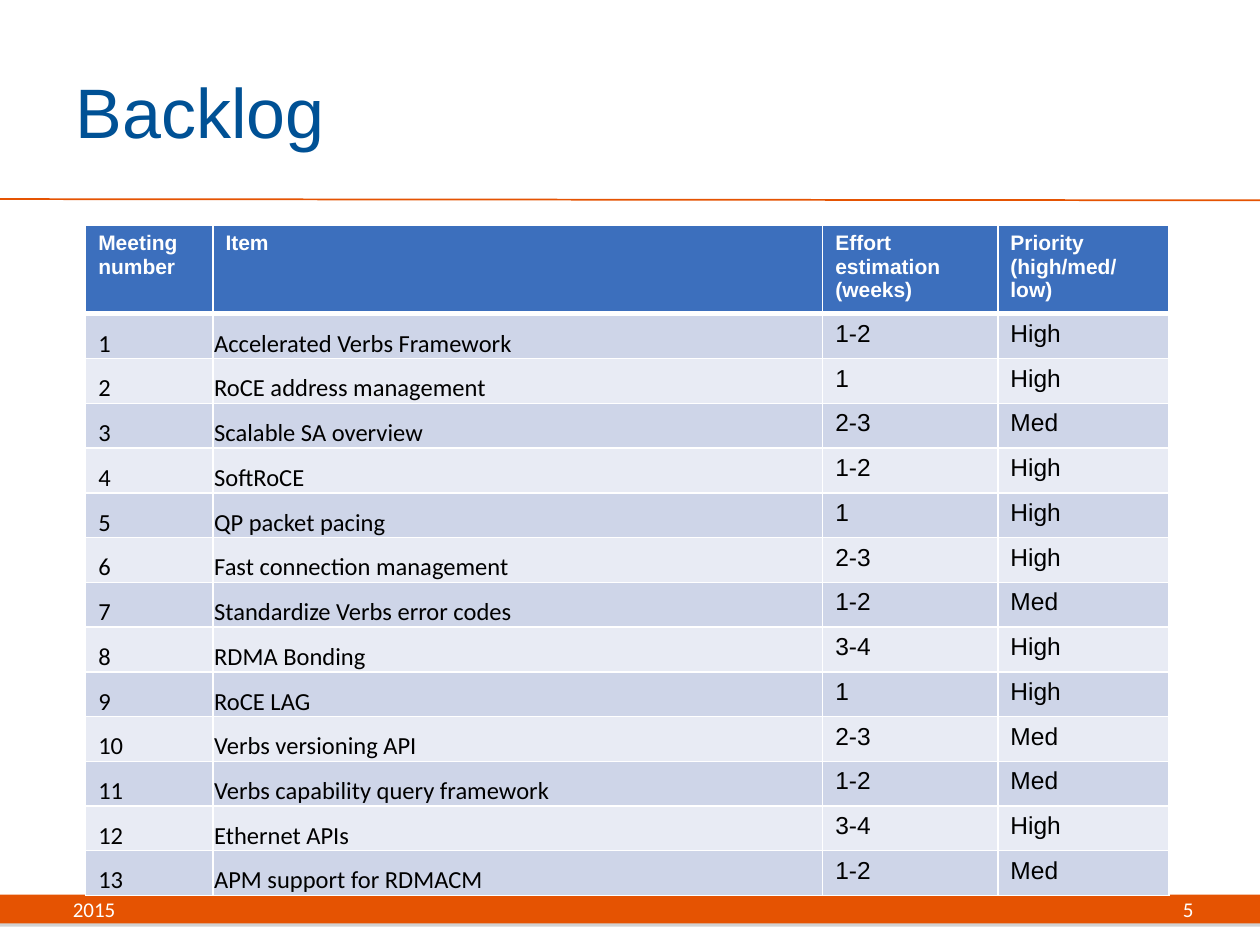
from dataclasses import dataclass
from lxml import etree
from pptx import Presentation
from pptx.dml.color import RGBColor
from pptx.enum.shapes import MSO_CONNECTOR, MSO_SHAPE
from pptx.enum.text import MSO_ANCHOR, MSO_AUTO_SIZE, PP_ALIGN
from pptx.oxml import parse_xml
from pptx.oxml.ns import qn
from pptx.util import Inches, Pt

LEFT, RIGHT = PP_ALIGN.LEFT, PP_ALIGN.RIGHT
TOP, MID, LOW = MSO_ANCHOR.TOP, MSO_ANCHOR.MIDDLE, MSO_ANCHOR.BOTTOM
FIXED = MSO_AUTO_SIZE.NONE
RECT, LINE = MSO_SHAPE.RECTANGLE, MSO_CONNECTOR.STRAIGHT
WIDE, HIGH = Inches(10), Inches(7.5)
SPACE = "http://schemas.openxmlformats.org/drawingml/2006/main"
WHITE, BLACK, ORANGE = "FFFFFF", "000000", "E55302"
BANDS = ["CED5E8", "E8EBF4"]
COLS = [1.01, 4.84, 1.39, 1.36]
HEAD, TALL = 0.57, 5.19
HEADS = [["Meeting number"], ["Item"], ["Effort estimation", "(weeks)"],
         ["Priority", "(high/med/low)"]]


@dataclass
class Font:
    size: int
    name: str
    tint: str
    bold: bool = False


@dataclass
class Task:
    item: str
    weeks: str
    rank: str


@dataclass
class Note:
    text: str
    left: float
    width: float
    align: PP_ALIGN


TASKS = [
    Task("Accelerated Verbs Framework", "1-2", "High"),
    Task("RoCE address management", "1", "High"),
    Task("Scalable SA overview", "2-3", "Med"),
    Task("SoftRoCE", "1-2", "High"),
    Task("QP packet pacing", "1", "High"),
    Task("Fast connection management", "2-3", "High"),
    Task("Standardize Verbs error codes", "1-2", "Med"),
    Task("RDMA Bonding", "3-4", "High"),
    Task("RoCE LAG", "1", "High"),
    Task("Verbs versioning API", "2-3", "Med"),
    Task("Verbs capability query framework", "1-2", "Med"),
    Task("Ethernet APIs", "3-4", "High"),
    Task("APM support for RDMACM", "1-2", "Med"),
]
NOTES = [Note("2015", 0.48, 9.05, LEFT), Note("5", 8.38, 1.19, RIGHT)]
HEAD_FONT = Font(12, "Arial", WHITE, True)
ITEM_FONT = Font(14, "Calibri", BLACK)
RANK_FONT = Font(14, "Arial", BLACK)


def color(code: str) -> RGBColor:
    return RGBColor.from_string(code)


def paint(shape, code: str) -> None:
    shape.fill.solid()
    shape.fill.fore_color.rgb = color(code)


def write(frame, lines: list[str], font: Font, align: PP_ALIGN = LEFT) -> None:
    for i, text in enumerate(lines):
        para = frame.paragraphs[0] if i == 0 else frame.add_paragraph()
        para.alignment = align
        run = para.add_run()
        run.text = text
        run.font.size = Pt(font.size)
        run.font.name = font.name
        run.font.bold = font.bold
        run.font.color.rgb = color(font.tint)


def edge(cell, side: str, width: float) -> None:
    props = cell._tc.get_or_add_tcPr()
    line = etree.SubElement(props, qn(f"a:ln{side}"), w=str(Pt(width)))
    fill = etree.SubElement(line, qn("a:solidFill"))
    etree.SubElement(fill, qn("a:srgbClr"), val=WHITE)


def dress(cell, lines: list[str], font: Font, tint: str, base: float) -> None:
    for side, width in zip("LRTB", [1, 1, 1, base]):
        edge(cell, side, width)
    paint(cell, tint)
    cell.vertical_anchor = TOP
    write(cell.text_frame, lines, font)


def sink(cell, left: float) -> None:
    cell.vertical_anchor = LOW
    cell.margin_left = Inches(left)
    cell.margin_right = cell.margin_top = Inches(0.01)
    cell.margin_bottom = 0


def draw_bar(slide) -> None:
    bar = slide.shapes.add_shape(RECT, 0, Inches(7.1), WIDE, Inches(0.23))
    paint(bar, ORANGE)
    bar.line.fill.background()
    bar._element.spPr.append(parse_xml(
        f'<a:effectLst xmlns:a="{SPACE}"><a:outerShdw blurRad="0" '
        f'dist="{Pt(1.8)}" dir="5400000" rotWithShape="0">'
        '<a:srgbClr val="808080"><a:alpha val="35000"/></a:srgbClr>'
        '</a:outerShdw></a:effectLst>'))


def draw_rule(slide) -> None:
    rule = slide.shapes.add_connector(LINE, 0, Inches(1.58), WIDE, Inches(1.59))
    rule.line.color.rgb = color(ORANGE)
    rule.line.width = Pt(1)
    etree.SubElement(rule._element.spPr, qn("a:effectLst"))


def draw_title(slide) -> None:
    title = slide.shapes.title
    title.left, title.top = Inches(0.5), Inches(0.25)
    title.width, title.height = Inches(8.17), Inches(1.25)
    title.text_frame.auto_size = FIXED
    title.text_frame.vertical_anchor = MID
    write(title.text_frame, ["Backlog"], Font(40, "Arial", "005195"))


def draw_note(slide, note: Note) -> None:
    box = slide.shapes.add_textbox(Inches(note.left), Inches(7.1),
                                   Inches(note.width), Inches(0.23))
    box.text_frame.word_wrap = True
    box.text_frame.vertical_anchor = MID
    write(box.text_frame, [note.text], Font(12, "Calibri", WHITE), note.align)


def draw_table(slide) -> None:
    table = slide.shapes.add_table(
        len(TASKS) + 1, len(COLS), Inches(0.68), Inches(1.79),
        Inches(sum(COLS)), Inches(TALL)).table
    for col, width in zip(table.columns, COLS):
        col.width = Inches(width)
    step = (TALL - HEAD) / len(TASKS)
    for i, row in enumerate(table.rows):
        row.height = Inches(step if i else HEAD)
    for cell, lines in zip(table.rows[0].cells, HEADS):
        dress(cell, lines, HEAD_FONT, "3C6FBD", 3)
    for i, task in enumerate(TASKS, 1):
        cells = list(table.rows[i].cells)
        texts = [str(i), task.item, task.weeks, task.rank]
        for j, (cell, text) in enumerate(zip(cells, texts)):
            font = ITEM_FONT if j < 2 else RANK_FONT
            dress(cell, [text], font, BANDS[(i - 1) % 2], 1)
            if i == 1:
                top = cell._tc.tcPr.find(qn("a:lnT"))
                top.set("w", str(Pt(3)))
        sink(cells[0], 0.1)
        sink(cells[1], 0.01)


def main() -> None:
    deck = Presentation()
    deck.slide_width, deck.slide_height = WIDE, HIGH
    slide = deck.slides.add_slide(deck.slide_layouts[5])
    draw_bar(slide)
    draw_rule(slide)
    draw_title(slide)
    for note in NOTES:
        draw_note(slide, note)
    draw_table(slide)
    deck.save("out.pptx")


if __name__ == "__main__":
    main()
